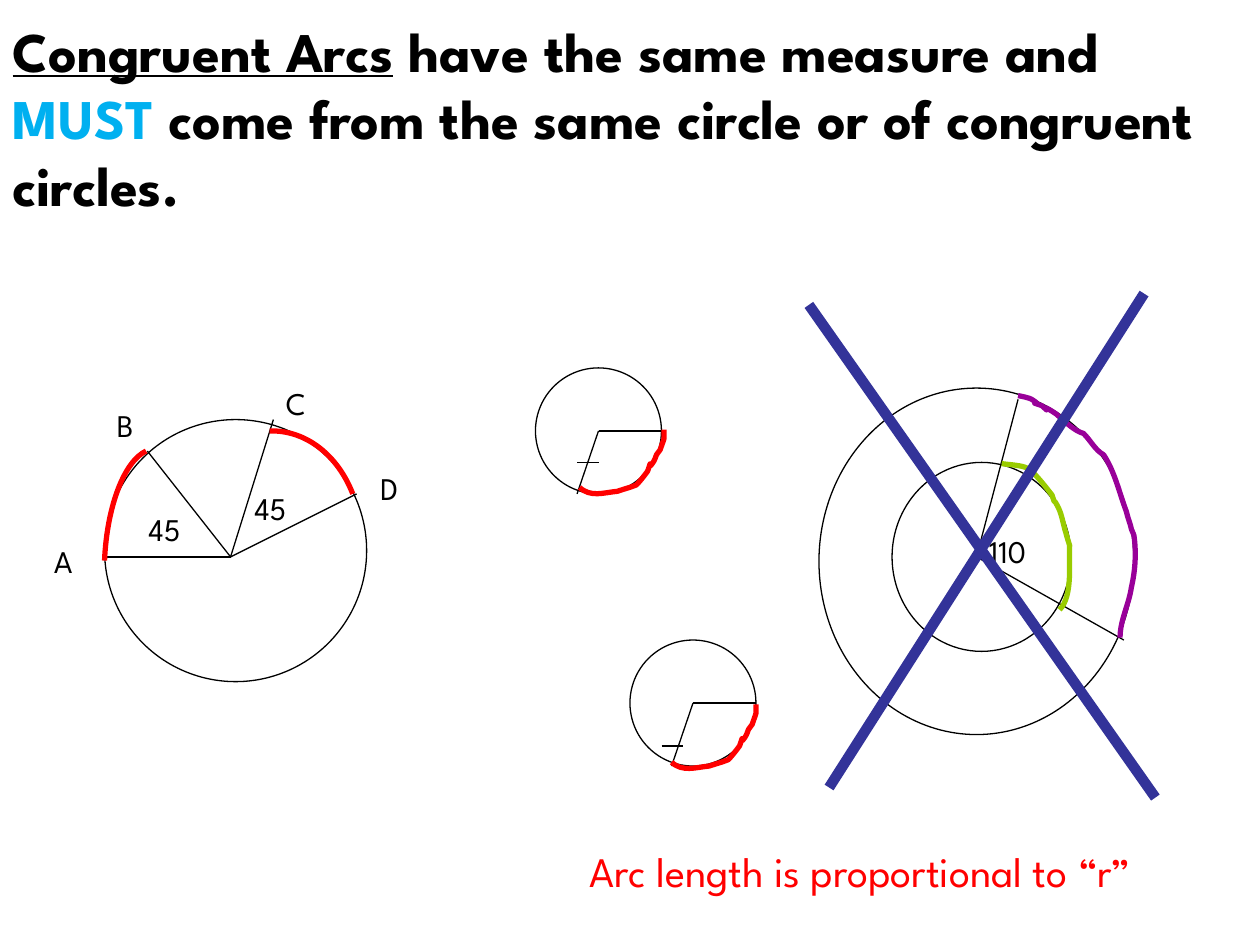
"""Build the congruent arcs slide."""
from dataclasses import dataclass

from lxml import etree
from pptx import Presentation
from pptx.dml.color import RGBColor
from pptx.enum.shapes import MSO_CONNECTOR, MSO_SHAPE
from pptx.enum.text import MSO_ANCHOR, MSO_AUTO_SIZE, PP_ALIGN
from pptx.oxml.ns import qn
from pptx.util import Inches, Pt

STRAIGHT = MSO_CONNECTOR.STRAIGHT
OVAL = MSO_SHAPE.OVAL
TOP = MSO_ANCHOR.TOP
GROW = MSO_AUTO_SIZE.SHAPE_TO_FIT_TEXT
LEFT = PP_ALIGN.LEFT
Point = tuple[float, float]


@dataclass(frozen=True)
class Theme:
    font: str = "League Spartan"
    black: str = "000000"
    blue: str = "00B0F0"
    red: str = "FF0000"
    green: str = "99CC00"
    purple: str = "990099"
    cross: str = "333399"
    title: int = 32
    note: int = 24
    label: int = 18
    thin: float = 0.75
    arc: float = 3
    bar: float = 6


@dataclass(frozen=True)
class Label:
    text: str
    x: float
    y: float
    w: float = 0.67
    h: float = 0.4
    size: int = Theme.label
    color: str = Theme.black
    wrap: bool = True


@dataclass(frozen=True)
class Circle:
    x: float
    y: float
    w: float
    h: float


@dataclass(frozen=True)
class Segment:
    start: Point
    end: Point
    color: str = Theme.black
    width: float = Theme.thin


@dataclass(frozen=True)
class Arc:
    points: tuple[Point, ...]
    color: str = Theme.red
    apex: Point | None = None


@dataclass(frozen=True)
class SmallCircle:
    center: Point
    tick: Point
    arc_start: Point


LEFT_CENTER, RING_CENTER = (1.83, 4.42), (7.75, 4.42)
LEFT_CIRCLE = Circle(0.83, 3.33, 2.08, 2.08)
RADII = [Segment(LEFT_CENTER, end) for end in
         ((0.83, 4.42), (1.17, 3.58), (2.17, 3.33), (2.83, 3.92))]
LEFT_LABELS = [
    Label("45", 1.92, 3.83), Label("45", 1.08, 4), Label("A", 0.33, 4.25),
    Label("B", 0.83, 3.17), Label("C", 2.17, 3), Label("D", 2.92, 3.67, 0.39, wrap=False),
]
LEFT_ARCS = [
    Arc(((2.14, 3.42), (2.15, 3.42), (2.16, 3.42), (2.16, 3.42),
         (2.43, 3.42), (2.68, 3.61), (2.8, 3.92)), apex=(2.16, 4.33)),
    Arc(((1.16, 3.58), (0.99, 3.66), (0.85, 4.01), (0.83, 4.45)), apex=(1.23, 4.58)),
]
SMALL_CIRCLES = [
    SmallCircle((4.75, 3.42), (4.58, 3.67), (4.6, 3.87)),
    SmallCircle((5.5, 5.58), (5.25, 5.92), (5.33, 6.05)),
]
SMALL_ARC = (
    (0, 0), (0.09, 0.08), (0.19, 0.04), (0.3, 0.03), (0.42, -0.01), (0.37, 0.01),
    (0.45, -0.02), (0.48, -0.05), (0.51, -0.09), (0.54, -0.13), (0.59, -0.27),
    (0.52, -0.1), (0.59, -0.21), (0.6, -0.22), (0.6, -0.24), (0.61, -0.26),
    (0.62, -0.27), (0.63, -0.29), (0.64, -0.3), (0.68, -0.42), (0.67, -0.36),
    (0.67, -0.46),
)
RINGS = [Circle(7.08, 3.67, 1.42, 1.5), Circle(6.5, 3.08, 2.5, 2.75)]
RING_RADII = [Segment(RING_CENTER, end) for end in ((8.08, 3.17), (8.92, 5.08))]
RING_ARCS = [
    Arc(((7.95, 3.68), (8.02, 3.69), (8.08, 3.69), (8.14, 3.71), (8.2, 3.73),
         (8.31, 3.88), (8.35, 3.93), (8.39, 4.05), (8.34, 3.91), (8.4, 4.03),
         (8.43, 4.09), (8.44, 4.17), (8.46, 4.23), (8.47, 4.27), (8.49, 4.33),
         (8.49, 4.33), (8.48, 4.45), (8.52, 4.73), (8.41, 4.84)), Theme.green),
    Arc(((8.08, 3.14), (8.09, 3.14), (8.18, 3.16), (8.19, 3.17), (8.3, 3.24),
         (8.13, 3.17), (8.27, 3.22), (8.37, 3.31), (8.22, 3.18), (8.36, 3.27),
         (8.38, 3.28), (8.4, 3.3), (8.41, 3.31), (8.47, 3.36), (8.53, 3.42),
         (8.6, 3.44), (8.66, 3.5), (8.69, 3.57), (8.76, 3.61), (8.85, 3.75),
         (8.88, 3.9), (8.94, 4.06), (8.95, 4.11), (8.97, 4.15), (8.98, 4.2),
         (8.99, 4.22), (9, 4.25), (9, 4.25), (9.02, 4.39), (9.01, 4.53),
         (8.98, 4.66), (8.96, 4.8), (8.89, 4.92), (8.89, 5.06)), Theme.purple),
]
CROSS = [Segment(start, end, Theme.cross, Theme.bar) for start, end in
         (((6.42, 2.42), (9.17, 6.33)), ((9.08, 2.33), (6.58, 6.25)))]
NOTE = Label("Arc length is proportional to “r”", 4.58, 6.66, 5.24, 0.5,
             Theme.note, Theme.red, False)
TITLE = [
    ("Congruent Arcs", Theme.black, True), (" have the same measure and ", Theme.black, False),
    ("MUST", Theme.blue, False),
    (" come from the same circle or of congruent circles.", Theme.black, False),
]


def set_all(obj, values: dict) -> None:
    for name, value in values.items():
        setattr(obj, name, value)


def add_run(p, text: str, size: int, color: str, **style) -> None:
    r = p.add_run()
    r.text = text
    set_all(r.font, {"name": Theme.font, "size": Pt(size), **style})
    r.font.color.rgb = RGBColor.from_string(color)


def set_line(sp, color: str, width: float) -> None:
    sp.line.color.rgb = RGBColor.from_string(color)
    sp.line.width = Pt(width)


def set_outline(sp, color: str, width: float) -> None:
    sp.fill.background()
    set_line(sp, color, width)
    sp.shadow.inherit = False


def add_title(s) -> None:
    sp = s.shapes.title
    set_all(sp, {"left": 0, "top": Inches(0.08), "width": Inches(9.92), "height": Inches(1.72)})
    tf = sp.text_frame
    set_all(tf, {"word_wrap": True, "vertical_anchor": TOP, "auto_size": GROW})
    p = tf.paragraphs[0]
    p.alignment = LEFT
    for text, color, underline in TITLE:
        add_run(p, text, Theme.title, color, bold=True, underline=underline)


def add_label(s, label: Label) -> None:
    sp = s.shapes.add_textbox(*map(Inches, (label.x, label.y, label.w, label.h)))
    set_all(sp.text_frame, {"word_wrap": label.wrap, "auto_size": GROW})
    add_run(sp.text_frame.paragraphs[0], label.text, label.size, label.color)


def add_circle(s, c: Circle) -> None:
    sp = s.shapes.add_shape(OVAL, *map(Inches, (c.x, c.y, c.w, c.h)))
    set_outline(sp, Theme.black, Theme.thin)


def add_segment(s, seg: Segment) -> None:
    sp = s.shapes.add_connector(STRAIGHT, *map(Inches, seg.start + seg.end))
    set_line(sp, seg.color, seg.width)
    etree.SubElement(sp._element.spPr, qn("a:effectLst"))


def add_arc(s, arc: Arc) -> None:
    start, *rest = [(Inches(x), Inches(y)) for x, y in arc.points]
    builder = s.shapes.build_freeform(*map(Inches, arc.apex or arc.points[0]))
    if arc.apex:
        builder.move_to(*start)
    builder.add_line_segments(rest, close=False)
    sp = builder.convert_to_shape()
    outline = sp._element.find(".//" + qn("a:path"))
    lines = outline.findall(qn("a:lnTo"))
    for i in range(0, len(lines), 3):
        curve = etree.SubElement(outline, qn("a:cubicBezTo"))
        for line in lines[i:i + 3]:
            curve.append(line[0])
            outline.remove(line)
    set_outline(sp, arc.color, Theme.arc)


def add_small_circle(s, small: SmallCircle) -> None:
    (x, y), (tx, ty), (ax, ay) = small.center, small.tick, small.arc_start
    add_circle(s, Circle(x - 0.5, y - 0.5, 1, 1))
    for start, end in ((small.center, (x - 0.17, y + 0.5)),
                       (small.tick, (tx + 0.17, ty)), (small.center, (x + 0.5, y))):
        add_segment(s, Segment(start, end))
    add_arc(s, Arc(tuple((ax + dx, ay + dy) for dx, dy in SMALL_ARC)))


def main() -> None:
    prs = Presentation()
    set_all(prs, {"slide_width": Inches(10), "slide_height": Inches(7.5)})
    s = prs.slides.add_slide(prs.slide_layouts[5])
    add_title(s)
    for draw, items in (
        (add_circle, [LEFT_CIRCLE]), (add_segment, RADII), (add_label, LEFT_LABELS),
        (add_arc, LEFT_ARCS), (add_small_circle, SMALL_CIRCLES), (add_circle, RINGS),
        (add_segment, RING_RADII), (add_label, [Label("110", 7.75, 4.17, 0.92)]),
        (add_arc, RING_ARCS), (add_segment, CROSS), (add_label, [NOTE]),
    ):
        for item in items:
            draw(s, item)
    prs.save("out.pptx")


if __name__ == "__main__":
    main()
